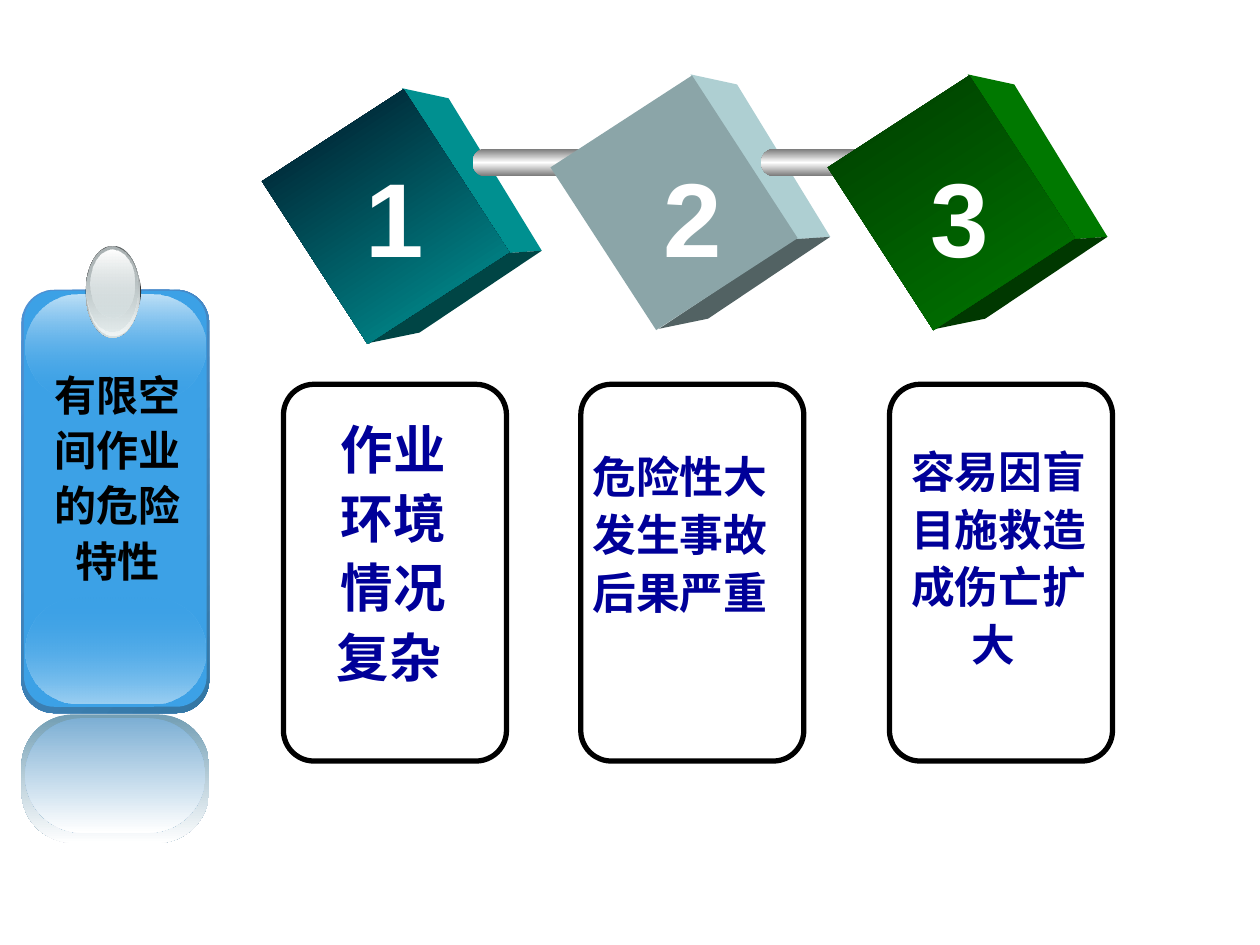
import pptx
import pptx.util
import pptx.dml.color
import pptx.enum.shapes
import pptx.enum.text
import pptx.oxml
import pptx.oxml.ns

COLORS = {
    "black": "000000", "white": "FFFFFF", "navy": "000099",
    "tag": "3CA1E6", "tag_light": "4E91D4", "tag_dark": "3477A4",
    "shine_top": "BEE0F7", "shine_bottom": "9BCFF2",
    "mirror_edge": "729EB4", "mirror": "7DAFD4",
    "clip_shadow": "333333", "clip_dark": "636869", "clip_mid": "AAB2B3",
    "clip": "D6E1E2", "clip_light": "F1F5F5", "rod": "767676",
    "teal_dark": "001325", "teal": "009999", "teal_side": "009090", "teal_base": "004545",
    "gray": "8BA5A8", "gray_side": "AECFD2", "gray_base": "526263",
    "green_dark": "003B00", "green": "007800", "green_side": "007800", "green_base": "003800",
}
KIND = pptx.enum.shapes.MSO_SHAPE
RGB = pptx.dml.color.RGBColor.from_string

deck = pptx.Presentation()
deck.slide_width = pptx.util.Inches(10)
deck.slide_height = pptx.util.Inches(7.5)
slide = deck.slides.add_slide(deck.slide_layouts[6])
# The grid has 100 columns and 75 rows
COL = deck.slide_width / 100
ROW = deck.slide_height / 75


def draw(kind, box, stops=(), angle=90, corner=None):
    """Place a preset shape; stops are colour names or (name, alpha percent)."""
    left, top, width, height = box
    shape = slide.shapes.add_shape(
        kind, round(left * COL), round(top * ROW), round(width * COL), round(height * ROW))
    shape.shadow.inherit = False
    shape.line.fill.background()
    if corner is not None:
        shape.adjustments[0] = corner
    if not stops:
        shape.fill.background()
    elif len(stops) == 1:
        shape.fill.solid()
        shape.fill.fore_color.rgb = RGB(COLORS[stops[0]])
    else:
        shape.fill.gradient()
        gradient = shape._element.spPr.find(pptx.oxml.ns.qn("a:gradFill"))
        stop_list = gradient.find(pptx.oxml.ns.qn("a:gsLst"))
        for old_stop in list(stop_list):
            stop_list.remove(old_stop)
        for i, stop in enumerate(stops):
            name, alpha = (stop, 100) if isinstance(stop, str) else stop
            stop_list.append(pptx.oxml.parse_xml(
                f'<a:gs {pptx.oxml.ns.nsdecls("a")} pos="{100000 * i // (len(stops) - 1)}">'
                f'<a:srgbClr val="{COLORS[name]}"><a:alpha val="{alpha * 1000}"/>'
                '</a:srgbClr></a:gs>'))
        gradient.find(pptx.oxml.ns.qn("a:lin")).set("ang", str(angle * 60000))
    return shape


def write(words, box, size, color, centered=True):
    left, top, width, height = box
    frame = slide.shapes.add_textbox(
        round(left * COL), round(top * ROW), round(width * COL), round(height * ROW)).text_frame
    frame.word_wrap = centered
    frame.text = words
    paragraph = frame.paragraphs[0]
    if centered:
        paragraph.alignment = pptx.enum.text.PP_ALIGN.CENTER
        paragraph.line_spacing = 1.1
    font = paragraph.runs[0].font
    font.name, font.size, font.bold = "Arial", pptx.util.Pt(size), True
    font.color.rgb = RGB(COLORS[color])
    return paragraph


# Blue tag with its shine and reflection
for box, stops, angle, corner in [
    ((1.7, 23, 14.9, 33.6), ("tag_light", "tag_dark"), 45, 0.175),
    ((1.9, 23.1, 14.5, 33), ("tag",), 90, 0.167),
    ((2, 47.4, 14.3, 8.4), (("tag", 0), "shine_bottom"), 90, 0.5),
    ((2, 23.4, 14.3, 8.3), ("shine_top", ("tag", 0)), 90, 0.5),
    ((1.7, 56.7, 14.9, 10.2), ("mirror_edge", "white"), 90, 0.404),
    ((2, 57, 14.3, 9.1), ("mirror", "white"), 90, 0.5),
]:
    draw(KIND.ROUNDED_RECTANGLE, box, stops, angle, corner)

# Metal clip on the tag
for box, stops in [
    ((6.8, 20.3, 4.4, 5.7), ("clip_shadow",)),
    ((6.8, 19.5, 4.3, 7.3), ("clip_dark", "clip")),
    ((6.9, 19.5, 4.2, 7.1), (("clip", 0), "clip_light")),
    ((6.9, 19.6, 4, 6.7), ("clip_mid", ("clip", 48))),
    ((7.2, 19.8, 3.5, 5.4), ("white", ("clip", 38))),
]:
    draw(KIND.OVAL, box, stops)
write("有限空间作业的危险特性", (2.2, 28.4, 14.2, 18.6), 24, "black")

# Cubes, each but the last followed by a rod to the next
SIDE = [(9, -10), (12.7, -9.2), (20.1, 2.9), (17.2, 3.1)]
BASE = [(17.2, 3.1), (20.1, 2.9), (10.4, 9.4), (6.5, 10.2)]
for left, top, front, hue in [
    (22.9, 10.5, ("teal_dark", "teal"), "teal"),
    (45.8, 9.4, ("gray",), "gray"),
    (67.8, 9.4, ("green_dark", "green"), "green"),
]:
    for corners, part in [(SIDE, "side"), (BASE, "base")]:
        points = [(round((left + x) * COL), round((top + 6.5 + y) * ROW)) for x, y in corners]
        builder = slide.shapes.build_freeform(*points[0])
        builder.add_line_segments(points[1:])
        face = builder.convert_to_shape()
        face.shadow.inherit = False
        face.fill.solid()
        face.fill.fore_color.rgb = RGB(COLORS[f"{hue}_{part}"])
        face.line.fill.background()
    draw(KIND.RECTANGLE, (left, top, 15.4, 13.4), front, 0).rotation = 57
    if hue != "green":
        rod = ("rod", "white", "rod")
        draw(KIND.OVAL, (left + 14.6, 11.8, 2.1, 2.2), rod)
        draw(KIND.RECTANGLE, (left + 15.8, 11.8, 10.3, 2.2), rod)

# Cube numbers
for number, left in [("1", 28), ("2", 51.7), ("3", 72.9)]:
    write(number, (left, 11.6, 6.3, 11), 60, "white", centered=False)

# Outlined cards
for left in (22.5, 46.1, 70.6):
    card = draw(KIND.ROUNDED_RECTANGLE, (left, 30.5, 17.7, 29.9), corner=0.137)
    card.line.color.rgb = RGB(COLORS["black"])
    card.line.width = pptx.util.Pt(3)

# Card texts
environment = write("作业环境情况复杂", (24.1, 32.1, 14.2, 23), 30, "navy")
gap = environment.add_run()
gap.text = " "
gap.font.size = pptx.util.Pt(20)
write("危险性大发生事故后果严重", (45.3, 34.8, 17.3, 14.8), 25, "navy")
write("容易因盲目施救造成伤亡扩大 ", (70.6, 34.4, 17.3, 19.3), 25, "navy")

deck.save("out.pptx")
